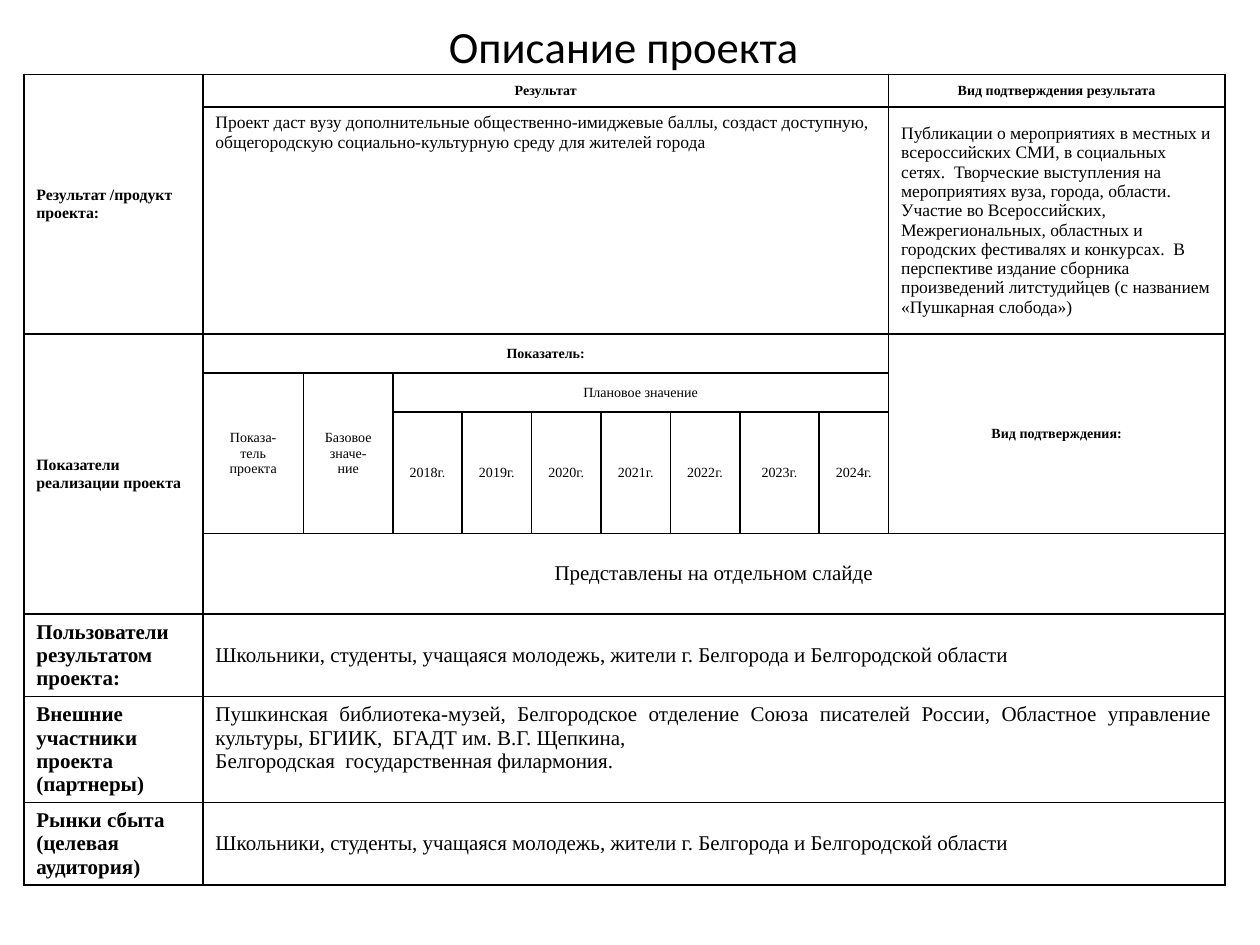
from dataclasses import dataclass

from lxml.etree import SubElement
from pptx import Presentation
from pptx.dml.color import RGBColor
from pptx.enum.text import MSO_ANCHOR as ANCHOR, PP_ALIGN as ALIGN
from pptx.oxml.ns import qn
from pptx.util import Cm, Pt

BLACK = "000000"
LEFT, CENTER, JUSTIFY = ALIGN.LEFT, ALIGN.CENTER, ALIGN.JUSTIFY
COLS = [3.61, 2.03, 1.8] + [1.4] * 5 + [1.6, 1.4, 6.78]
ROWS = [0.66, 4.57, 0.79, 0.79, 2.44, 1.63, 1.3, 1.57, 0.66]


@dataclass
class Entry:
    """A table entry; each line of its text is a paragraph."""
    row: int
    col: int
    text: str
    size: float = 8
    bold: bool = False
    align: ALIGN = CENTER
    rows: int = 1
    cols: int = 1
    anchor: ANCHOR = ANCHOR.MIDDLE


def rgb(value: str) -> RGBColor:
    return RGBColor.from_string(value)


def write(tf, text: str, *, size: float, font: str = "Times New Roman",
          bold: bool = False, align: ALIGN = LEFT) -> None:
    for i, line in enumerate(text.split("\n")):
        p = tf.add_paragraph() if i else tf.paragraphs[0]
        p.alignment = align
        r = p.add_run()
        r.text = line
        r.font.name, r.font.size, r.font.bold = font, Pt(size), bold
        r.font.color.rgb = rgb(BLACK)


def add_borders(cell, color: str = BLACK, width: float = 1) -> None:
    tc_pr = cell._tc.get_or_add_tcPr()
    for side in ("lnL", "lnR", "lnT", "lnB"):
        ln = SubElement(tc_pr, qn(f"a:{side}"), w=str(Pt(width)))
        fill = SubElement(ln, qn("a:solidFill"))
        SubElement(fill, qn("a:srgbClr"), val=color)


def fill_entry(table, e: Entry) -> None:
    cell = table.cell(e.row, e.col)
    if e.rows > 1 or e.cols > 1:
        cell.merge(table.cell(e.row + e.rows - 1, e.col + e.cols - 1))
    cell.vertical_anchor = e.anchor
    write(cell.text_frame, e.text, size=e.size, bold=e.bold, align=e.align)


AUDIENCE = ("Школьники, студенты, учащаяся молодежь, "
            "жители г. Белгорода и Белгородской области")

ENTRIES = [
    # Result of the project
    Entry(0, 0, "Результат /продукт проекта:", 9, True, LEFT, rows=2),
    Entry(0, 1, "Результат", bold=True, cols=9),
    Entry(0, 10, "Вид подтверждения результата", bold=True),
    Entry(1, 1, "Проект даст вузу дополнительные общественно-имиджевые баллы, "
          "создаст доступную, общегородскую социально-культурную среду "
          "для жителей города", 10, align=LEFT, cols=9, anchor=ANCHOR.TOP),
    Entry(1, 10, "Публикации о мероприятиях в местных и всероссийских СМИ, "
          "в социальных сетях.  Творческие выступления на мероприятиях вуза, "
          "города, области. Участие во Всероссийских, Межрегиональных, "
          "областных и городских фестивалях и конкурсах.  В перспективе "
          "издание сборника произведений литстудийцев "
          "(с названием «Пушкарная слобода»)", 10, align=LEFT),
    # Indicators
    Entry(2, 0, "Показатели реализации проекта", 9, True, LEFT, rows=4),
    Entry(2, 1, "Показатель:", bold=True, cols=9),
    Entry(2, 10, "Вид подтверждения:", bold=True, rows=3),
    Entry(3, 1, "Показа-\nтель\nпроекта", rows=2),
    Entry(3, 2, "Базовое значе-\nние", rows=2),
    Entry(3, 3, "Плановое значение", cols=7),
    *[Entry(4, 3 + i, f"{2018 + i}г.") for i in range(7)],
    Entry(5, 1, "Представлены на отдельном слайде", 12, cols=10),
    # Users, partners and markets
    Entry(6, 0, "Пользователи\nрезультатом проекта:", 12, True, LEFT),
    Entry(6, 1, AUDIENCE, 12, align=JUSTIFY, cols=10),
    Entry(7, 0, "Внешние участники проекта (партнеры)", 12, True, LEFT),
    Entry(7, 1, "Пушкинская библиотека-музей, Белгородское отделение Союза "
          "писателей России, Областное управление культуры, БГИИК,  "
          "БГАДТ им. В.Г. Щепкина,\n"
          "Белгородская  государственная филармония.",
          12, align=JUSTIFY, cols=10, anchor=ANCHOR.TOP),
    Entry(8, 0, "Рынки сбыта (целевая аудитория)", 12, True, LEFT),
    Entry(8, 1, AUDIENCE, 12, align=JUSTIFY, cols=10),
]


def main() -> None:
    prs = Presentation()
    prs.slide_width, prs.slide_height = Cm(25.4), Cm(19.05)
    s = prs.slides.add_slide(prs.slide_layouts[5])

    # Title
    title = s.shapes.title
    title.left, title.top = Cm(0.51), Cm(0.33)
    title.width, title.height = Cm(24.13), Cm(1.17)
    title.text_frame.vertical_anchor = ANCHOR.MIDDLE
    write(title.text_frame, "Описание проекта", size=25.5, font="Calibri",
          align=CENTER)

    # Table grid
    sp = s.shapes.add_table(len(ROWS), len(COLS), Cm(0.48), Cm(1.5),
                            Cm(sum(COLS)), Cm(sum(ROWS)))
    table = sp.table
    table.first_row = table.horz_banding = False
    for column, width in zip(table.columns, COLS):
        column.width = Cm(width)
    for row, height in zip(table.rows, ROWS):
        row.height = Cm(height)
    sp.height = Cm(16.66)
    for cell in table.iter_cells():
        add_borders(cell)
        cell.fill.background()

    # Table text
    for entry in ENTRIES:
        fill_entry(table, entry)

    prs.save("out.pptx")


if __name__ == "__main__":
    main()
